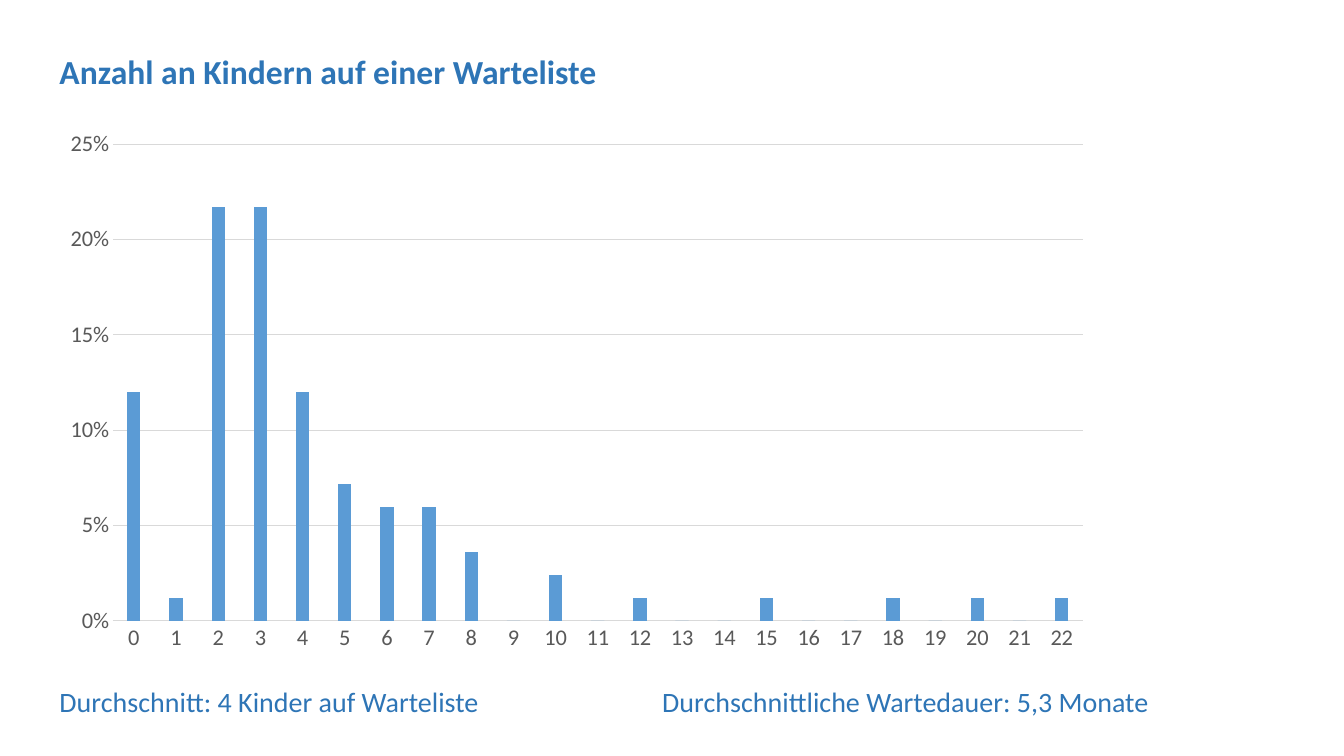
from lxml import etree
from pptx import Presentation
from pptx.chart.data import CategoryChartData
from pptx.dml.color import RGBColor
from pptx.enum.chart import XL_CHART_TYPE, XL_TICK_MARK
from pptx.enum.text import MSO_AUTO_SIZE
from pptx.oxml.ns import qn
from pptx.util import Cm, Pt

COLUMNS = XL_CHART_TYPE.COLUMN_CLUSTERED
NO_TICK = XL_TICK_MARK.NONE
FIT_SHAPE = MSO_AUTO_SIZE.SHAPE_TO_FIT_TEXT

FONT = "Calibri"
COLORS = {"text": "2E75B6", "bar": "5B9BD5", "axis": "595959", "line": "D9D9D9"}
LEFT = Cm(1.25)
TEXT_WIDTH = Cm(30)


def color(name):
    return RGBColor.from_string(COLORS[name])


def add_text_line(top, height, text, size, bold=False):
    box = page.shapes.add_textbox(LEFT, top, TEXT_WIDTH, height)
    box.text_frame.word_wrap = True
    box.text_frame.auto_size = FIT_SHAPE
    para = box.text_frame.paragraphs[0]
    para.text = text
    para.font.name = FONT
    para.font.size = Pt(size)
    para.font.bold = bold
    para.font.color.rgb = color("text")
    return para


deck = Presentation()
deck.slide_width = Cm(33.87)
deck.slide_height = Cm(19.05)
page = deck.slides.add_slide(deck.slide_layouts[6])

add_text_line(Cm(1.17), Cm(1.28), "Anzahl an Kindern auf einer Warteliste", 24, bold=True)

# Share of answers by number of children on the waiting list
shares = [0.12, 0.012, 0.217, 0.217, 0.12, 0.072, 0.06, 0.06, 0.036, 0, 0.024, 0,
          0.012, 0, 0, 0.012, 0, 0, 0.012, 0, 0.012, 0, 0.012]
data = CategoryChartData(number_format="0%")
data.categories = [str(children) for children in range(len(shares))]
data.add_series("Anteil", shares)
chart = page.shapes.add_chart(COLUMNS, LEFT, Cm(3.02), Cm(26.57), Cm(13.69), data).chart
chart.has_legend = False
chart.has_title = False
chart.font.name = FONT
chart.font.size = Pt(16)
chart.font.color.rgb = color("axis")

plot = chart.plots[0]
plot.gap_width = 219
plot.overlap = -27
plot.vary_by_categories = False
bars = plot.series[0]
bars.format.fill.solid()
bars.format.fill.fore_color.rgb = color("bar")

share_axis = chart.value_axis
share_axis.minimum_scale = 0
share_axis.maximum_scale = 0.25
share_axis.major_unit = 0.05
share_axis.tick_labels.number_format = "0%"
share_axis.tick_labels.number_format_is_linked = False
share_axis.format.line.fill.background()
for axis in (chart.category_axis, share_axis):
    axis.major_tick_mark = NO_TICK
    axis.minor_tick_mark = NO_TICK
for line in (chart.category_axis.format.line, share_axis.major_gridlines.format.line):
    line.color.rgb = color("line")
    line.width = Pt(0.75)

averages = add_text_line(
    Cm(17.12), Cm(1.11),
    "Durchschnitt: 4 Kinder auf Warteliste\tDurchschnittliche Wartedauer: 5,3 Monate", 20)
tab_stops = etree.Element(qn("a:tabLst"))
etree.SubElement(tab_stops, qn("a:tab"), pos=str(Cm(15.19)), algn="l")
averages._p.get_or_add_pPr().insert(0, tab_stops)

deck.save("out.pptx")
